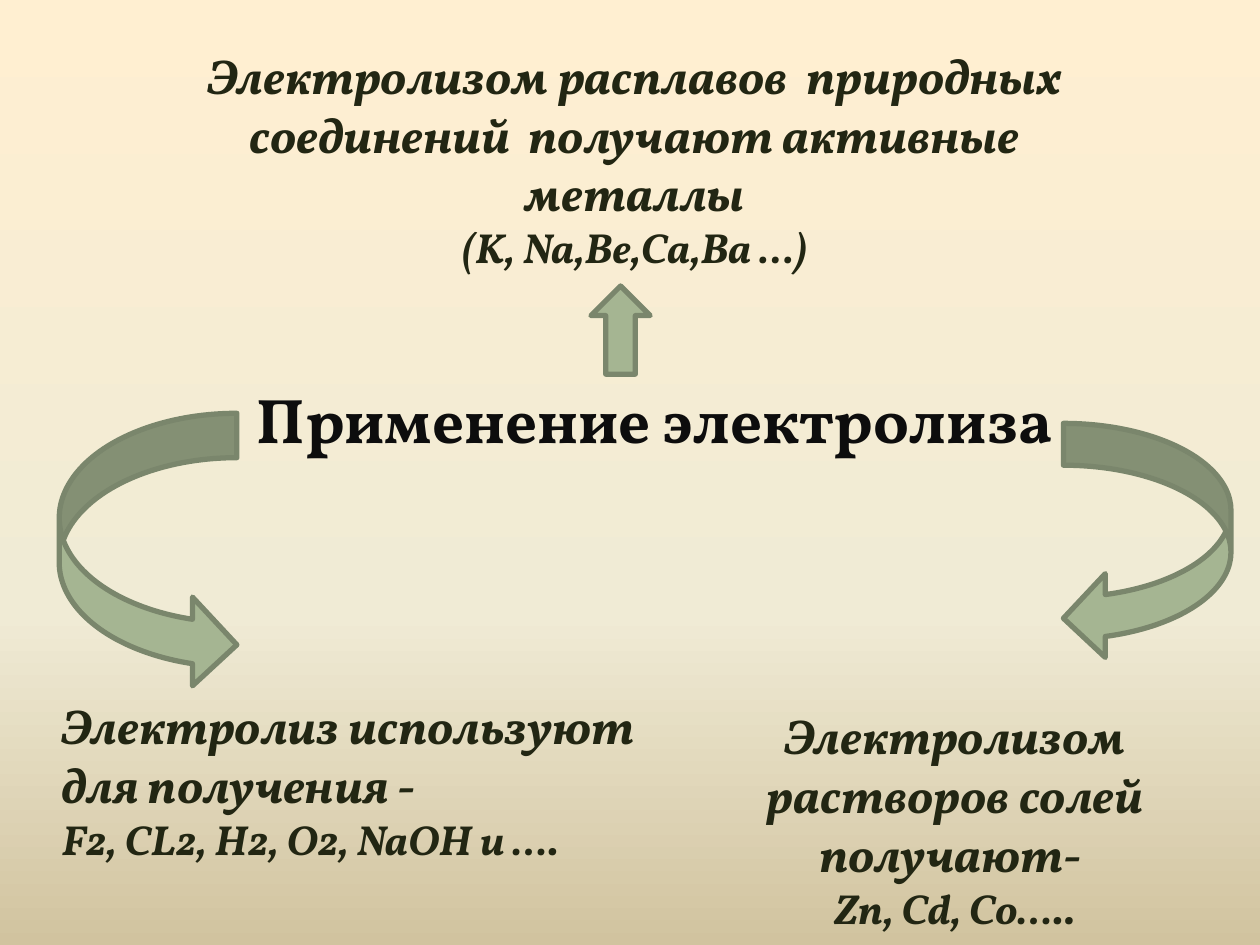
from copy import deepcopy

from pptx import Presentation
from pptx import util as u
from pptx.dml.color import RGBColor
from pptx.enum import shapes, text
from pptx.oxml.ns import qn


def color(hex_string):
    return RGBColor.from_string(hex_string)


class SlideBuilder:
    font_name = "Vollkorn"
    title_color = "0D0D0D"
    text_color = "222613"
    arrow_fill = "A5B592"
    arrow_line = "7A866C"

    def __init__(self, slide):
        self.slide = slide

    def background(self, stops):
        """Fill the background from top to bottom with (position, colour) stops."""
        fill = self.slide.background.fill
        fill.gradient()
        fill.gradient_angle = 270
        stop_list = next(self.slide.element.iter(qn("a:gsLst")))
        while len(stop_list) < len(stops):
            stop_list.append(deepcopy(stop_list[-1]))
        for gradient_stop, (position, hex_string) in zip(fill.gradient_stops, stops):
            gradient_stop.position = position
            gradient_stop.color.rgb = color(hex_string)

    def text_box(self, box, lines, hex_string, align, italic):
        """Add one paragraph for each (wording, point size) pair."""
        shape = self.slide.shapes.add_textbox(*map(u.Inches, box))
        frame = shape.text_frame
        frame.word_wrap = True
        frame.auto_size = text.MSO_AUTO_SIZE.SHAPE_TO_FIT_TEXT
        for index, (wording, size) in enumerate(lines):
            paragraph = frame.add_paragraph() if index else frame.paragraphs[0]
            paragraph.alignment = align
            run = paragraph.add_run()
            run.text = wording
            font = run.font
            font.name, font.size = self.font_name, u.Pt(size)
            font.bold, font.italic = True, italic
            font.color.rgb = color(hex_string)

    def title(self, box, wording):
        self.text_box(box, [(wording, 36)], self.title_color,
                      text.PP_ALIGN.CENTER, False)

    def use_case(self, box, statement, examples, align=text.PP_ALIGN.CENTER):
        self.text_box(box, [(statement, 28), (examples, 24)],
                      self.text_color, align, True)

    def arrow(self, kind, box):
        shape = self.slide.shapes.add_shape(kind, *map(u.Inches, box))
        shape.shadow.inherit = False
        shape.fill.solid()
        shape.fill.fore_color.rgb = color(self.arrow_fill)
        shape.line.color.rgb = color(self.arrow_line)
        shape.line.width = u.Pt(3)


def main():
    presentation = Presentation()
    presentation.slide_width = u.Inches(10)
    presentation.slide_height = u.Inches(7.5)
    slide = presentation.slides.add_slide(presentation.slide_layouts[6])
    builder = SlideBuilder(slide)

    builder.background([(0, "FFEFD1"), (0.65, "F0EBD5"), (1, "D1C39F")])
    builder.title((1.33, 2.97, 7.73, 0.71), "Применение электролиза")
    builder.use_case(
        (1.48, 0.31, 7.11, 1.92),
        "Электролизом расплавов  природных соединений  получают активные металлы",
        "(K, Na,Be,Ca,Ba …)")
    builder.use_case(
        (5.16, 5.55, 4.84, 1.92),
        "Электролизом растворов солей получают- ",
        "Zn, Cd, Co…..")
    builder.use_case(
        (0.39, 5.47, 5, 1.92),
        "Электролиз используют для получения -",
        "F2, CL2, H2, O2, NaOH и ….",
        text.PP_ALIGN.LEFT)

    kinds = shapes.MSO_SHAPE
    builder.arrow(kinds.CURVED_RIGHT_ARROW, (0.47, 3.28, 1.41, 2.19))
    builder.arrow(kinds.CURVED_LEFT_ARROW, (8.44, 3.36, 1.33, 1.88))
    builder.arrow(kinds.UP_ARROW, (4.69, 2.27, 0.47, 0.7))

    presentation.save("out.pptx")


if __name__ == "__main__":
    main()
